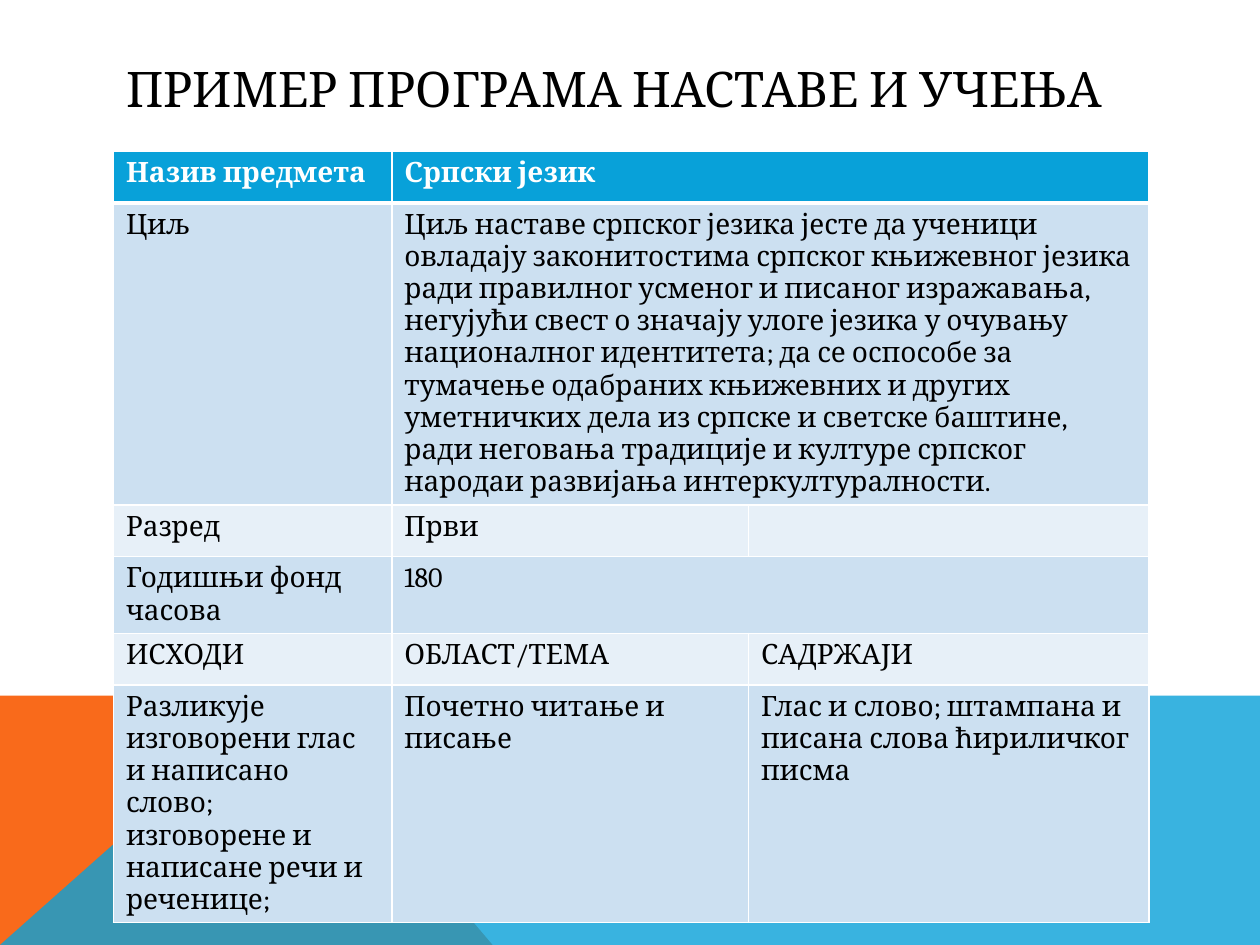
from lxml import etree
from pptx import Presentation
from pptx.dml.color import RGBColor
from pptx.enum.text import MSO_ANCHOR, MSO_AUTO_SIZE, PP_ALIGN
from pptx.oxml.ns import qn
from pptx.util import Inches, Pt

LEFT = PP_ALIGN.LEFT
MIDDLE = MSO_ANCHOR.MIDDLE
FIXED = MSO_AUTO_SIZE.NONE
HUES = {"blue": "08A1D9", "orange": "F96A1B", "dark": "CCE0F1",
        "light": "E7F0F8", "white": "FFFFFF", "black": "000000"}
WIDTHS = (2.21, 2.83, 3.18)
ROW = 0.41
ROWS = (
    ("Назив предмета", "Српски језик"),
    ("Циљ", "Циљ наставе српског језика јесте да ученици овладају "
     "законитостима српског књижевног језика ради правилног усменог и "
     "писаног изражавања, негујући свест о значају улоге језика у очувању "
     "националног идентитета; да се оспособе за тумачење одабраних "
     "књижевних и других уметничких дела из српске и светске баштине, ради "
     "неговања традиције и културе српског народаи развијања "
     "интеркултуралности."),
    ("Разред", "Први", ""),
    ("Годишњи фонд часова", "180"),
    ("ИСХОДИ", "ОБЛАСТ/ТЕМА", "САДРЖАЈИ"),
    ("Разликује изговорени глас и написано слово; изговорене и написане "
     "речи и реченице;", "Почетно читање и писање",
     "Глас и слово; штампана и писана слова ћириличког писма"),
)


def paint(fill, hue):
    """Fill with a solid named colour."""
    fill.solid()
    fill.fore_color.rgb = RGBColor.from_string(HUES[hue])


def write(frame, text, size=16, hue="black", bold=False):
    """Put one formatted, left-aligned run into a text frame."""
    para = frame.paragraphs[0]
    para.alignment = LEFT
    run = para.add_run()
    run.text = text
    font = run.font
    font.name, font.size, font.bold = "Cambria", Pt(size), bold
    font.color.rgb = RGBColor.from_string(HUES[hue])


def draw(slide, points, hue, alpha=None):
    """Draw a closed outline, with opacity in percent if given."""
    spots = [(Inches(x), Inches(y)) for x, y in points]
    form = slide.shapes.build_freeform(*spots[0])
    form.add_line_segments(spots[1:])
    shape = form.convert_to_shape()
    shape.shadow.inherit = False
    shape.line.fill.background()
    paint(shape.fill, hue)
    if alpha:
        tint = shape._element.spPr.find(f".//{qn('a:srgbClr')}")
        etree.SubElement(tint, qn("a:alpha")).set("val", str(alpha * 1000))


def edge(cell, **sides):
    """Draw white cell borders with widths in points by side."""
    props = cell._tc.get_or_add_tcPr()
    for side in "LRTB":
        line = etree.SubElement(props, qn(f"a:ln{side}"),
                                w=str(Pt(sides.get(side, 1))))
        solid = etree.SubElement(line, qn("a:solidFill"))
        etree.SubElement(solid, qn("a:srgbClr"), val=HUES["white"])


def head(slide, text):
    """Place and fill the title."""
    title = slide.shapes.title
    title.left, title.top = Inches(0.9), Inches(0.4)
    title.width, title.height = Inches(8.22), Inches(0.6)
    frame = title.text_frame
    frame.auto_size, frame.vertical_anchor = FIXED, MIDDLE
    frame.word_wrap = True
    write(frame, text, size=28)


def grid(slide):
    """Add the programme table, spanning rows that have two cells."""
    table = slide.shapes.add_table(
        len(ROWS), len(WIDTHS), Inches(0.9), Inches(1.2),
        Inches(sum(WIDTHS)), Inches(ROW * len(ROWS))).table
    for col, width in zip(table.columns, WIDTHS):
        col.width = Inches(width)
    for r, texts in enumerate(ROWS):
        top = r == 0
        hue = "blue" if top else "dark" if r % 2 else "light"
        for c in range(len(WIDTHS)):
            cell = table.cell(r, c)
            edge(cell, T=3 if r == 1 else 1, B=3 if top else 1)
            paint(cell.fill, hue)
        if len(texts) == 2:
            table.cell(r, 1).merge(table.cell(r, 2))
        for c, text in enumerate(texts):
            if text:
                write(table.cell(r, c).text_frame, text, bold=top,
                      hue="white" if top else "black")


def main():
    """Build and save the slide."""
    deck = Presentation()
    deck.slide_width, deck.slide_height = Inches(10), Inches(7.5)
    slide = deck.slides.add_slide(deck.slide_layouts[5])
    draw(slide, [(0, 7.5), (0, 5.52), (2.23, 5.52), (3.91, 7.5)], "orange")
    draw(slide, [(0, 7.5), (2.23, 5.52), (10, 5.52), (10, 7.5)], "blue", 80)
    head(slide, "ПРИМЕР ПРОГРАМА НАСТАВЕ И УЧЕЊА")
    grid(slide)
    deck.save("out.pptx")


if __name__ == "__main__":
    main()
